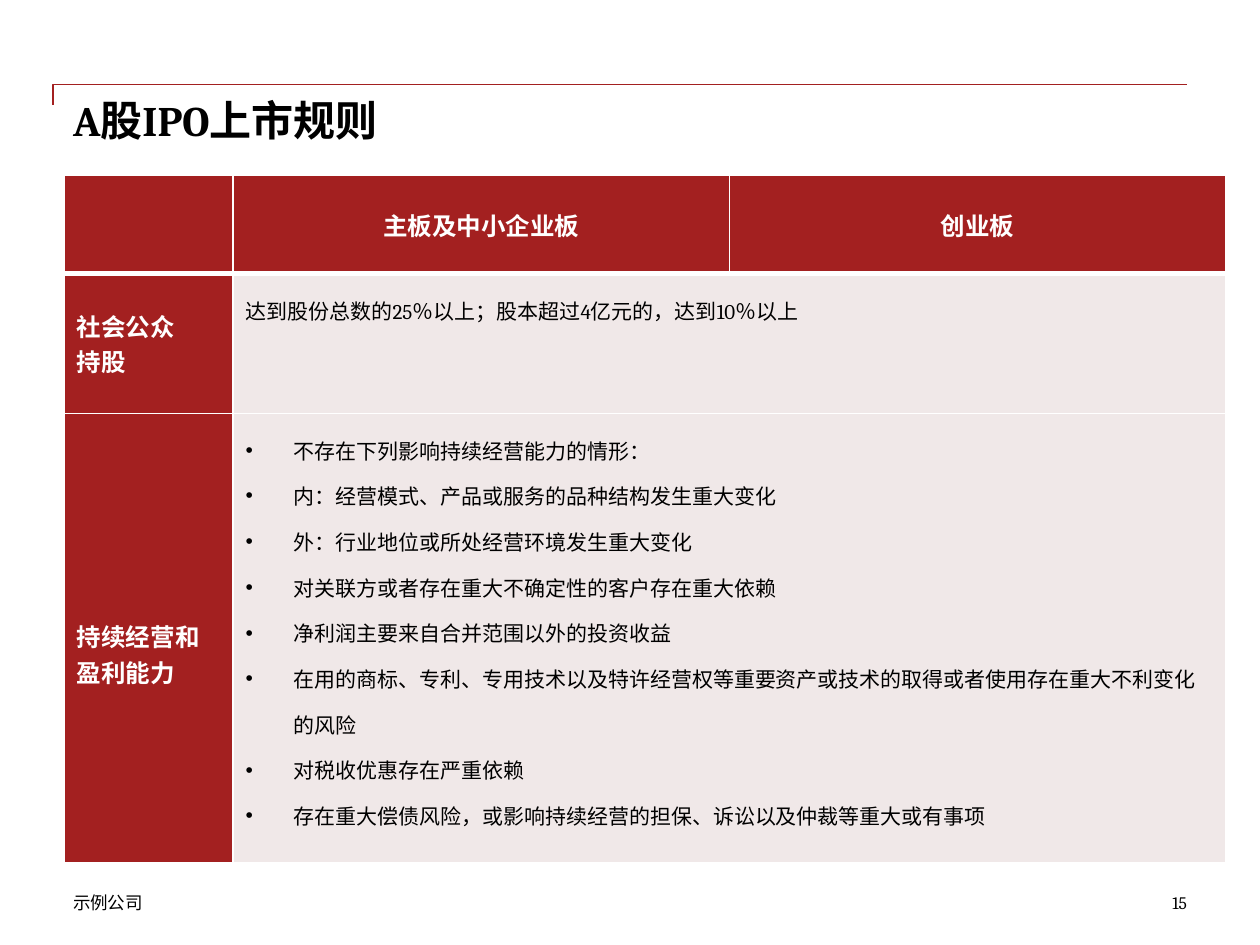
"""Build the A-share IPO listing rules slide."""
from dataclasses import dataclass

from lxml.etree import SubElement
from pptx import Presentation
from pptx.dml.color import RGBColor
from pptx.enum.text import MSO_ANCHOR, PP_ALIGN
from pptx.oxml import parse_xml
from pptx.oxml.ns import nsdecls, qn
from pptx.util import Inches, Pt

COLORS = {"red": "A32020", "pale": "F0E8E8", "white": "FFFFFF", "black": "000000"}
LATIN, CJK = "Cambria", "Noto Sans CJK SC"
COLS = (1.34, 3.94, 3.94)
ROWS = (0.78, 1.11, 3.57)
RISKS = (
    "不存在下列影响持续经营能力的情形：",
    "内：经营模式、产品或服务的品种结构发生重大变化",
    "外：行业地位或所处经营环境发生重大变化",
    "对关联方或者存在重大不确定性的客户存在重大依赖",
    "净利润主要来自合并范围以外的投资收益",
    "在用的商标、专利、专用技术以及特许经营权等重要资产或技术的取得或者使用存在重大不利变化的风险",
    "对税收优惠存在严重依赖",
    "存在重大偿债风险，或影响持续经营的担保、诉讼以及仲裁等重大或有事项",
)


@dataclass
class Label:
    """A free text on the slide."""
    text: str
    box: tuple[float, float, float, float]
    size: int = 10
    bold: bool = False
    font: str = LATIN
    align: PP_ALIGN = PP_ALIGN.LEFT


@dataclass
class Entry:
    """A table cell with its text and look."""
    row: int
    col: int
    lines: tuple[str, ...] = ()
    head: bool = True
    align: PP_ALIGN = PP_ALIGN.LEFT
    bullet: bool = False
    top: float = 0.05


LABELS = (
    Label("A股IPO上市规则", (0.58, 0.75, 8.83, 0.5), size=24, bold=True),
    Label("示例公司", (0.58, 7.08, 2.83, 0.17), font=CJK),
    Label("15", (7.75, 7.08, 1.67, 0.17), align=PP_ALIGN.RIGHT),
)
ENTRIES = (
    Entry(0, 0),
    Entry(0, 1, ("主板及中小企业板",), align=PP_ALIGN.CENTER),
    Entry(0, 2, ("创业板",), align=PP_ALIGN.CENTER),
    Entry(1, 0, ("社会公众", "持股")),
    Entry(1, 1, ("达到股份总数的25％以上；股本超过4亿元的，达到10％以上",), head=False),
    Entry(2, 0, ("持续经营和盈利能力",), top=0.3),
    Entry(2, 1, RISKS, head=False, bullet=True),
)


def write(tf, lines, *, size, color="black", bold=False, font=LATIN,
          align=PP_ALIGN.LEFT, spacing=None, bullet=False) -> None:
    """Fill a text frame with one formatted paragraph per line."""
    for i, line in enumerate(lines):
        p = tf.paragraphs[0] if i == 0 else tf.add_paragraph()
        p.alignment, p.line_spacing = align, spacing
        if bullet:
            pPr = p._p.get_or_add_pPr()
            pPr.set("marL", str(Inches(0.38)))
            pPr.set("indent", str(-Inches(0.38)))
            SubElement(pPr, qn("a:buFont"), typeface="Arial")
            SubElement(pPr, qn("a:buChar"), char="•")
        r = p.add_run()
        r.text = line
        r.font.size, r.font.bold, r.font.name = Pt(size), bold, font
        r.font.color.rgb = RGBColor.from_string(COLORS[color])
        SubElement(r._r.get_or_add_rPr(), qn("a:ea"), typeface=CJK)


def add_label(s, label: Label) -> None:
    """Add a text box without insets."""
    tf = s.shapes.add_textbox(*map(Inches, label.box)).text_frame
    tf.word_wrap = True
    tf.margin_left = tf.margin_right = tf.margin_top = tf.margin_bottom = 0
    write(tf, [label.text], size=label.size, bold=label.bold, font=label.font,
          align=label.align)


def add_rule(s) -> None:
    """Draw the angled rule above the title."""
    fb = s.shapes.build_freeform(Inches(0.42), Inches(0.83))
    fb.add_line_segments([(Inches(0.42), Inches(0.67)), (Inches(9.42), Inches(0.67))],
                         close=False)
    sp = fb.convert_to_shape()
    sp.shadow.inherit = False
    sp.fill.background()
    sp.line.color.rgb = RGBColor.from_string(COLORS["red"])
    sp.line.width = Pt(1)


def set_borders(cell, row: int) -> None:
    """Give a cell white borders, thick between header and body."""
    widths = {"L": 1, "R": 1, "T": 3 if row == 1 else 1, "B": 3 if row == 0 else 1}
    tcPr = cell._tc.get_or_add_tcPr()
    for i, (side, width) in enumerate(widths.items()):
        tcPr.insert(i, parse_xml(
            f'<a:ln{side} {nsdecls("a")} w="{Pt(width)}"><a:solidFill>'
            f'<a:srgbClr val="{COLORS["white"]}"/></a:solidFill></a:ln{side}>'))


def fill_cell(table, entry: Entry) -> None:
    """Colour a cell and write its text."""
    cell = table.cell(entry.row, entry.col)
    cell.fill.solid()
    cell.fill.fore_color.rgb = RGBColor.from_string(COLORS["red" if entry.head else "pale"])
    cell.margin_top = Inches(entry.top)
    cell.vertical_anchor = MSO_ANCHOR.MIDDLE if entry.head else MSO_ANCHOR.TOP
    write(cell.text_frame, entry.lines, size=14 if entry.head else 12,
          color="white" if entry.head else "black", bold=entry.head, align=entry.align,
          spacing=None if entry.head else 1.5, bullet=entry.bullet)


def add_rules_table(s) -> None:
    """Add the table of listing rules."""
    table = s.shapes.add_table(len(ROWS), len(COLS), Inches(0.51), Inches(1.39),
                               Inches(sum(COLS)), Inches(sum(ROWS))).table
    table.horz_banding = False
    for column, width in zip(table.columns, COLS):
        column.width = Inches(width)
    for i, height in enumerate(ROWS):
        table.rows[i].height = Inches(height)
        for cell in table.rows[i].cells:
            set_borders(cell, i)
        if i > 0:
            table.cell(i, 1).merge(table.cell(i, 2))
    for entry in ENTRIES:
        fill_cell(table, entry)


def main() -> None:
    """Build and save the slide."""
    prs = Presentation()
    prs.slide_width, prs.slide_height = Inches(10), Inches(7.5)
    s = prs.slides.add_slide(prs.slide_layouts[6])
    add_rule(s)
    for label in LABELS:
        add_label(s, label)
    add_rules_table(s)
    prs.save("out.pptx")


if __name__ == "__main__":
    main()
